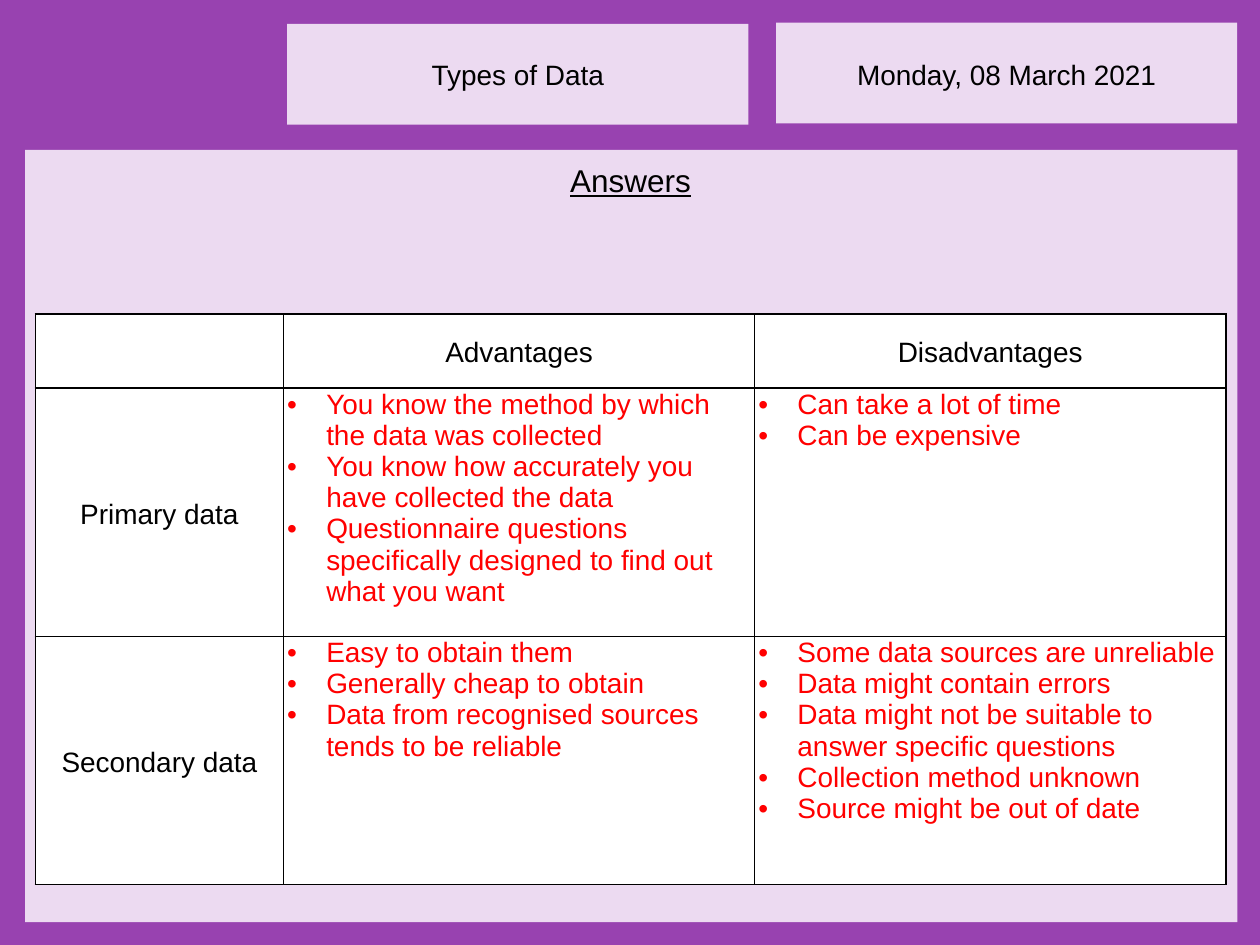
"""Build the answers slide on primary and secondary data."""
from lxml.etree import SubElement
from pptx import Presentation
from pptx.dml.color import RGBColor
from pptx.enum.shapes import MSO_SHAPE as Shape
from pptx.enum.text import MSO_ANCHOR as Anchor, MSO_AUTO_SIZE as AutoSize, PP_ALIGN as Align
from pptx.oxml.ns import qn
from pptx.util import Inches, Pt

PURPLE = RGBColor(0x98, 0x42, 0xB0)
LILAC = RGBColor(0xEC, 0xDA, 0xF1)
WHITE = RGBColor(0xFF, 0xFF, 0xFF)
BLACK = RGBColor(0x00, 0x00, 0x00)
RED = RGBColor(0xFF, 0x00, 0x00)
FONT = "Arial"

COLUMN_WIDTHS = [1.97, 3.74, 3.74]
ROW_HEIGHTS = [0.59, 1.97, 1.97]
HEADINGS = ["", "Advantages", "Disadvantages"]
ANSWERS = {
    "Primary data": [
        ["You know the method by which the data was collected",
         "You know how accurately you have collected the data",
         "Questionnaire questions specifically designed to find out what you want"],
        ["Can take a lot of time", "Can be expensive"],
    ],
    "Secondary data": [
        ["Easy to obtain them", "Generally cheap to obtain",
         "Data from recognised sources tends to be reliable"],
        ["Some data sources are unreliable", "Data might contain errors",
         "Data might not be suitable to answer specific questions",
         "Collection method unknown", "Source might be out of date"],
    ],
}


def add_panel(page, left, top, width, height, color):
    """Add a plain filled rectangle."""
    panel = page.shapes.add_shape(
        Shape.RECTANGLE, Inches(left), Inches(top), Inches(width), Inches(height))
    panel.shadow.inherit = False
    panel.fill.solid()
    panel.fill.fore_color.rgb = color
    panel.line.fill.background()


def write(para, text, size=16, color=BLACK, align=Align.CENTER, underline=None,
          line_spacing=None, space_after=None, bullet=False):
    """Put formatted text into a paragraph."""
    if bullet:
        properties = para._p.get_or_add_pPr()
        properties.set("marL", str(Inches(0.31)))
        properties.set("indent", str(-Inches(0.31)))
        SubElement(properties, qn("a:buFont"), typeface=FONT)
        SubElement(properties, qn("a:buChar"), char="•")
    para.alignment = align
    para.line_spacing = line_spacing
    para.space_after = space_after
    span = para.add_run()
    span.text = text
    span.font.name = FONT
    span.font.size = Pt(size)
    span.font.color.rgb = color
    span.font.underline = underline


def add_label(page, text, left):
    """Add a centred header label."""
    box = page.shapes.add_textbox(Inches(left), Inches(0.41), Inches(3.66), Inches(0.37))
    box.text_frame.word_wrap = True
    write(box.text_frame.paragraphs[0], text)


def set_title(page, text):
    """Move the title placeholder in front of the panels and fill it."""
    title = page.shapes.title
    title.element.getparent().append(title.element)
    title.left, title.top = Inches(0.28), Inches(1.23)
    title.width, title.height = Inches(9.45), Inches(0.4)
    title.text_frame.auto_size = AutoSize.NONE
    title.text_frame.vertical_anchor = Anchor.TOP
    write(title.text_frame.paragraphs[0], text, size=18, underline=True)


def style_cell(cell):
    """Give a cell black borders, a white fill and narrow margins."""
    properties = cell._tc.get_or_add_tcPr()
    for side in ("lnL", "lnR", "lnT", "lnB"):
        line = SubElement(properties, qn(f"a:{side}"), w=str(Pt(1)))
        fill = SubElement(line, qn("a:solidFill"))
        SubElement(fill, qn("a:srgbClr"), val=str(BLACK))
    cell.fill.solid()
    cell.fill.fore_color.rgb = WHITE
    cell.margin_left = cell.margin_right = Inches(0.03)
    cell.margin_top = cell.margin_bottom = Inches(0.01)


def fill_cell(cell, content):
    """Write a centred heading or a bulleted list into a cell."""
    style_cell(cell)
    frame = cell.text_frame
    if isinstance(content, list):
        for index, item in enumerate(content):
            para = frame.add_paragraph() if index else frame.paragraphs[0]
            write(para, item, color=RED, align=Align.LEFT, bullet=True)
    elif content:
        cell.vertical_anchor = Anchor.MIDDLE
        write(frame.paragraphs[0], content, line_spacing=1.15, space_after=Pt(10))


def add_answer_table(page):
    """Add the table comparing both types of data."""
    rows = [HEADINGS] + [[name, *lists] for name, lists in ANSWERS.items()]
    table = page.shapes.add_table(
        len(rows), len(HEADINGS), Inches(0.28), Inches(2.49),
        Inches(sum(COLUMN_WIDTHS)), Inches(sum(ROW_HEIGHTS))).table
    table.first_row = table.horz_banding = False
    for column, width in zip(table.columns, COLUMN_WIDTHS):
        column.width = Inches(width)
    for row, height, contents in zip(table.rows, ROW_HEIGHTS, rows):
        row.height = Inches(height)
        for cell, content in zip(row.cells, contents):
            fill_cell(cell, content)


def main():
    """Build and save the deck."""
    deck = Presentation()
    deck.slide_width, deck.slide_height = Inches(10), Inches(7.5)
    page = deck.slides.add_slide(deck.slide_layouts[5])
    add_panel(page, 0, 0, 10, 7.5, PURPLE)
    for text, left, top in (("Monday, 08 March 2021", 6.16, 0.18), ("Types of Data", 2.28, 0.19)):
        add_panel(page, left, top, 3.66, 0.8, LILAC)
        add_label(page, text, left)
    add_panel(page, 0.2, 1.19, 9.62, 6.13, LILAC)
    set_title(page, "Answers")
    add_answer_table(page)
    deck.save("out.pptx")


if __name__ == "__main__":
    main()
